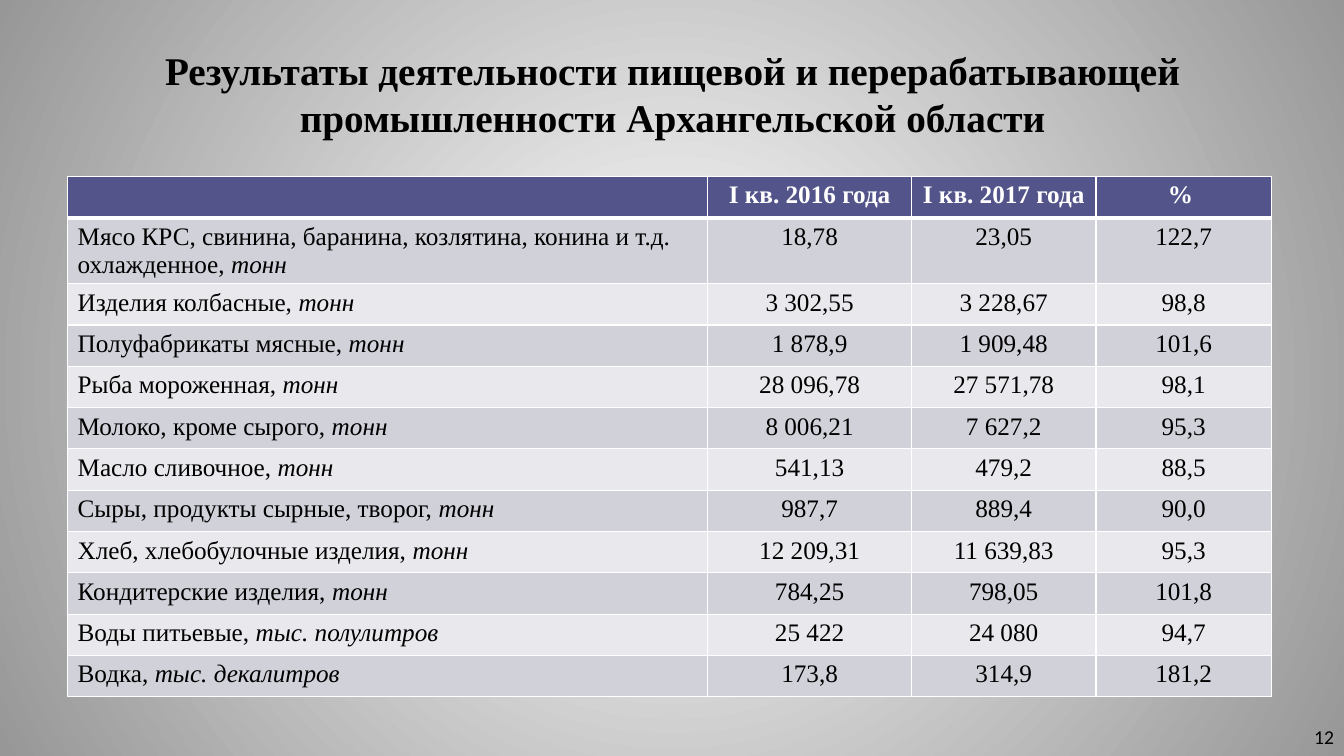
from dataclasses import dataclass

from lxml import etree
from pptx import Presentation
from pptx.dml.color import RGBColor
from pptx.enum.text import MSO_ANCHOR, PP_ALIGN
from pptx.oxml.ns import qn
from pptx.slide import Slide
from pptx.table import _Cell
from pptx.text.text import _Paragraph, _Run
from pptx.util import Inches, Pt

LEFT, CENTER, RIGHT = PP_ALIGN.LEFT, PP_ALIGN.CENTER, PP_ALIGN.RIGHT
MIDDLE = MSO_ANCHOR.MIDDLE
TITLE_ONLY = 5
SERIF, SANS = "Times New Roman", "Calibri"
BLACK, WHITE, GRAY = "000000", "FFFFFF", "979797"
HEADER_FILL = "53548A"
BAND_FILLS = ("D1D1DA", "E9E9ED")
COLUMN_WIDTHS = (6.35, 2.02, 1.83, 1.74)
ROW_HEIGHT, TALL_ROW_HEIGHT = 0.41, 0.65
TITLE = "Результаты деятельности пищевой и перерабатывающей промышленности Архангельской области"
HEADINGS = ("", "I кв. 2016 года", "I кв. 2017 года", "% ")


@dataclass(frozen=True)
class Product:
    name: str
    unit: str
    first: str
    second: str
    percent: str


PRODUCTS = (
    Product("Мясо КРС, свинина, баранина, козлятина, конина и т.д. охлажденное, ", "тонн",
            "18,78", "23,05", "122,7"),
    Product("Изделия колбасные, ", "тонн", "3 302,55", "3 228,67", "98,8"),
    Product("Полуфабрикаты мясные, ", "тонн", "1 878,9", "1 909,48", "101,6"),
    Product("Рыба мороженная, ", "тонн", "28 096,78", "27 571,78", "98,1"),
    Product("Молоко, кроме сырого, ", "тонн", "8 006,21", "7 627,2", "95,3"),
    Product("Масло сливочное, ", "тонн", "541,13", "479,2", "88,5"),
    Product("Сыры, продукты сырные, творог, ", "тонн", "987,7", "889,4", "90,0"),
    Product("Хлеб, хлебобулочные изделия, ", "тонн", "12 209,31", "11 639,83", "95,3"),
    Product("Кондитерские изделия, ", "тонн", "784,25", "798,05", "101,8"),
    Product("Воды питьевые, ", "тыс. полулитров", "25 422", "24 080", "94,7"),
    Product("Водка, ", "тыс. декалитров", "173,8", "314,9", "181,2"),
)


def rgb(value: str) -> RGBColor:
    return RGBColor.from_string(value)


def format_run(span: _Run, size: float, color: str = BLACK, font: str = SERIF,
               bold: bool = False, italic: bool = False) -> None:
    span.font.size = Pt(size)
    span.font.name = font
    span.font.color.rgb = rgb(color)
    span.font.bold = bold
    span.font.italic = italic


def paint_background(page: Slide) -> None:
    fill = page.background.fill
    fill.gradient()
    for stop, color, position in zip(fill.gradient_stops, (WHITE, GRAY), (0, 1)):
        stop.color.rgb = rgb(color)
        stop.position = position
    gradient = next(page.element.iter(qn("a:gradFill")))
    gradient.remove(gradient.find(qn("a:lin")))
    circle = etree.SubElement(gradient, qn("a:path"), {"path": "circle"})
    etree.SubElement(circle, qn("a:fillToRect"), {side: "50000" for side in "ltrb"})


def paint_cell(cell: _Cell, color: str, top: float, bottom: float) -> None:
    cell.fill.solid()
    cell.fill.fore_color.rgb = rgb(color)
    properties = cell._tc.get_or_add_tcPr()
    for index, (side, width) in enumerate({"L": 1, "R": 1, "T": top, "B": bottom}.items()):
        line = etree.Element(qn(f"a:ln{side}"), {"w": str(Pt(width))})
        solid = etree.SubElement(line, qn("a:solidFill"))
        etree.SubElement(solid, qn("a:srgbClr"), {"val": WHITE})
        properties.insert(index, line)


def write_cell(cell: _Cell, text: str, align: PP_ALIGN = CENTER,
               color: str = BLACK, bold: bool = False) -> _Paragraph:
    para = cell.text_frame.paragraphs[0]
    para.text = text
    para.alignment = align
    para.font.size = Pt(18)
    for span in para.runs:
        format_run(span, 18, color, bold=bold)
    return para


def add_title(page: Slide) -> None:
    title = page.shapes.title
    title.left, title.top = Inches(0.67), Inches(0.3)
    title.width, title.height = Inches(12), Inches(1.25)
    frame = title.text_frame
    frame.text = TITLE
    frame.vertical_anchor = MIDDLE
    frame.paragraphs[0].alignment = CENTER
    format_run(frame.paragraphs[0].runs[0], 28, bold=True)


def add_output_table(page: Slide) -> None:
    height = ROW_HEIGHT * len(PRODUCTS) + TALL_ROW_HEIGHT
    table = page.shapes.add_table(
        len(PRODUCTS) + 1, len(HEADINGS), Inches(0.67), Inches(1.75),
        Inches(sum(COLUMN_WIDTHS)), Inches(height)).table
    table.horz_banding = False
    for column, width in zip(table.columns, COLUMN_WIDTHS):
        column.width = Inches(width)
    for index, row in enumerate(table.rows):
        row.height = Inches(TALL_ROW_HEIGHT if index == 1 else ROW_HEIGHT)
    for column, heading in enumerate(HEADINGS):
        cell = table.cell(0, column)
        paint_cell(cell, HEADER_FILL, 1, 3)
        write_cell(cell, heading, CENTER, WHITE, True)
    for index, product in enumerate(PRODUCTS, start=1):
        values = (product.name, product.first, product.second, product.percent)
        for column, value in enumerate(values):
            cell = table.cell(index, column)
            paint_cell(cell, BAND_FILLS[(index - 1) % 2], 3 if index == 1 else 1, 1)
            para = write_cell(cell, value, CENTER if column else LEFT)
            if column == 0:
                unit = para.add_run()
                unit.text = product.unit
                format_run(unit, 18, italic=True)


def add_page_number(page: Slide) -> None:
    box = page.shapes.add_textbox(Inches(10.22), Inches(7.11), Inches(3.11), Inches(0.4))
    frame = box.text_frame
    frame.word_wrap = True
    frame.vertical_anchor = MIDDLE
    frame.text = "12"
    frame.paragraphs[0].alignment = RIGHT
    format_run(frame.paragraphs[0].runs[0], 14, font=SANS)


def main() -> None:
    deck = Presentation()
    deck.slide_width, deck.slide_height = Inches(13.33), Inches(7.5)
    page = deck.slides.add_slide(deck.slide_layouts[TITLE_ONLY])
    paint_background(page)
    add_title(page)
    add_output_table(page)
    add_page_number(page)
    deck.save("out.pptx")


if __name__ == "__main__":
    main()
